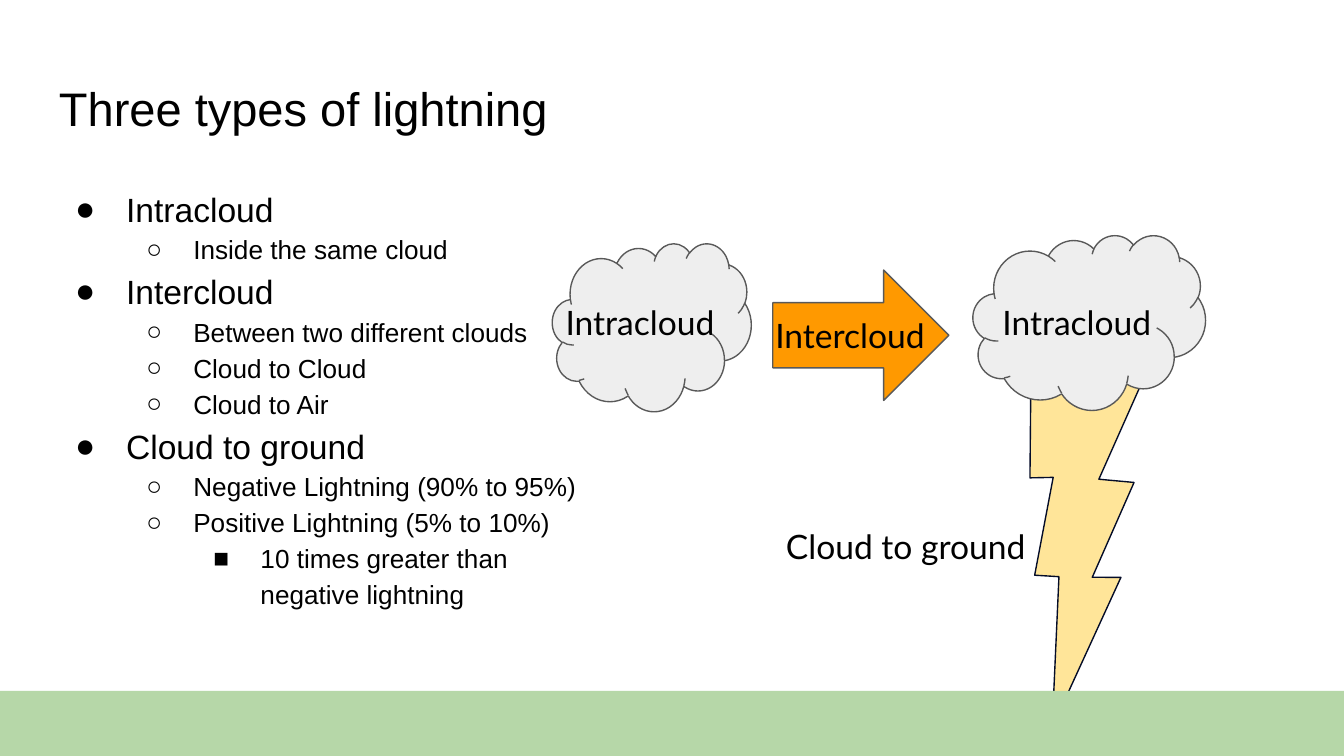
from pptx import Presentation
from pptx.dml.color import RGBColor
from pptx.enum.shapes import MSO_SHAPE
from pptx.enum.text import MSO_ANCHOR
from pptx.oxml.ns import qn
from pptx.util import Inches, Pt
from lxml.etree import SubElement

BLACK = RGBColor(0x00, 0x00, 0x00)
GRAY = RGBColor(0x59, 0x59, 0x59)
CLOUD = RGBColor(0xEE, 0xEE, 0xEE)
ORANGE = RGBColor(0xFF, 0x99, 0x00)
YELLOW = RGBColor(0xFF, 0xE5, 0x99)
NAVY = RGBColor(0x04, 0x0C, 0x28)
GREEN = RGBColor(0xB6, 0xD7, 0xA8)

LEVELS = [("●", 18, 0.38), ("○", 14, 0.35), ("■", 14, 0.35)]
POINTS = [
    (0, "Intracloud"),
    (1, "Inside the same cloud"),
    (0, "Intercloud"),
    (1, "Between two different clouds"),
    (1, "Cloud to Cloud"),
    (1, "Cloud to Air"),
    (0, "Cloud to ground"),
    (1, "Negative Lightning (90% to 95%)"),
    (1, "Positive Lightning (5% to 10%)"),
    (2, "10 times greater than negative lightning"),
]
LABELS = [
    ("Intracloud", 4.11, 2.15, 1.48),
    ("Intracloud", 7.36, 2.15, 1.48),
    ("Intercloud", 5.67, 2.24, 1.48),
    ("Cloud to ground", 5.75, 3.81, 2.04),
]


def add_shape(slide, kind, box, fill, line=None):
    shape = slide.shapes.add_shape(kind, *map(Inches, box))
    shape.shadow.inherit = False
    shape.fill.solid()
    shape.fill.fore_color.rgb = fill
    if line is None:
        shape.line.fill.background()
    else:
        shape.line.color.rgb = line
        shape.line.width = Pt(0.75)
    return shape


def add_frame(slide, box):
    frame = slide.shapes.add_textbox(*map(Inches, box)).text_frame
    frame.word_wrap = True
    frame.vertical_anchor = MSO_ANCHOR.TOP
    frame.margin_left = frame.margin_right = Inches(0.1)
    frame.margin_top = frame.margin_bottom = Inches(0.1)
    return frame


def style(para, size, face):
    for run in para.runs:
        run.font.size = Pt(size)
        run.font.name = face
        run.font.color.rgb = BLACK


def add_text(slide, text, box, size, face):
    frame = add_frame(slide, box)
    frame.text = text
    style(frame.paragraphs[0], size, face)


def set_bullet(para, level):
    mark, _, hang = LEVELS[level]
    para.level = level
    para.line_spacing = 1.15
    props = para._p.get_or_add_pPr()
    props.set("marL", str(Inches(0.5 * (level + 1))))
    props.set("indent", str(-Inches(hang)))
    color = SubElement(props, qn("a:buClr"))
    SubElement(color, qn("a:srgbClr"), val=str(BLACK))
    SubElement(props, qn("a:buFont"), typeface="Arial")
    SubElement(props, qn("a:buChar"), char=mark)


def add_list(slide, points, box):
    frame = add_frame(slide, box)
    frame.text = "\n".join(text for _, text in points)
    for para, (level, _) in zip(frame.paragraphs, points):
        set_bullet(para, level)
        style(para, LEVELS[level][1], "Arial")


def add_bolt(slide, box):
    bolt = add_shape(slide, MSO_SHAPE.LIGHTNING_BOLT, box, YELLOW, NAVY)
    bolt.rotation = 331.5
    bolt._element.spPr.xfrm.set("flipH", "1")


def main():
    deck = Presentation()
    deck.slide_width = Inches(10)
    deck.slide_height = Inches(10 * 9 / 16)
    slide = deck.slides.add_slide(deck.slide_layouts[6])

    add_bolt(slide, (7.15, 2.74, 1.83, 2.38))
    add_text(slide, "Three types of lightning", (0.34, 0.49, 9.32, 0.63), 25.2, "Arial")
    add_list(slide, POINTS, (0.34, 1.26, 4.07, 3.74))
    for box in [(4.11, 1.81, 1.48, 1.25), (7.24, 1.75, 1.73, 1.3)]:
        add_shape(slide, MSO_SHAPE.CLOUD, box, CLOUD, GRAY)
    add_shape(slide, MSO_SHAPE.RIGHT_ARROW, (5.75, 2.01, 1.31, 0.97), ORANGE, GRAY)
    for text, left, top, width in LABELS:
        add_text(slide, text, (left, top, width, 0.5), 18, "Lato")
    add_shape(slide, MSO_SHAPE.RECTANGLE, (0, 5.14, 10, 0.5), GREEN)

    deck.save("out.pptx")


if __name__ == "__main__":
    main()
